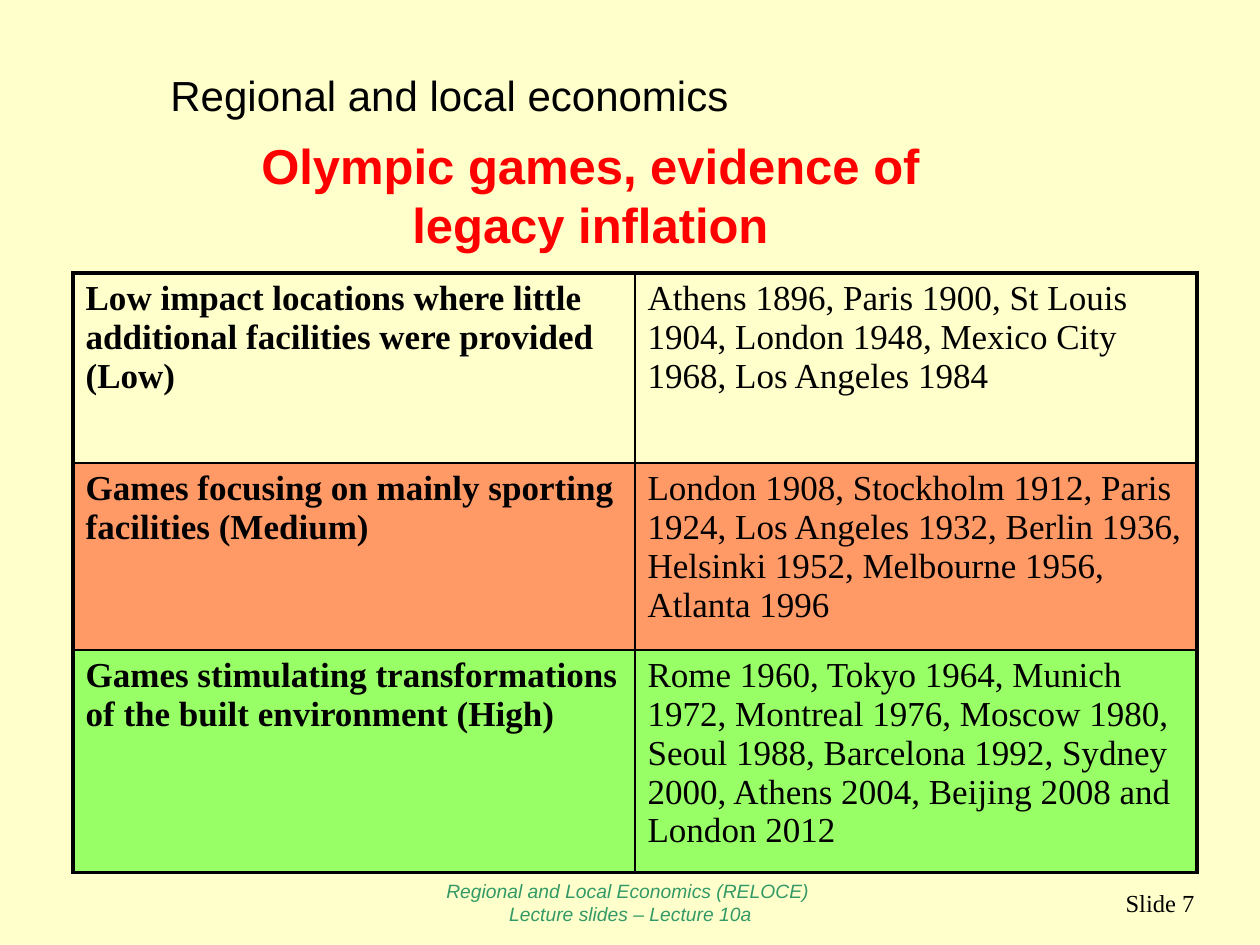
from dataclasses import dataclass

from lxml.etree import SubElement
from pptx import Presentation
from pptx.dml.color import RGBColor
from pptx.enum.text import MSO_ANCHOR as Anchor, MSO_AUTO_SIZE as AutoSize, PP_ALIGN as Align
from pptx.oxml.ns import qn
from pptx.util import Emu, Pt

PX = 914400 // 126
COLORS = {
    "background": "FFFFCC",
    "text": "000000",
    "title": "FF0000",
    "footer": "339966",
    "medium": "FF9966",
    "high": "99FF66",
}


@dataclass
class Style:
    size: int
    font: str = "Arial"
    color: str = "text"
    bold: bool = False
    italic: bool = False


@dataclass
class Label:
    box: tuple[int, int, int, int]
    lines: list[str]
    style: Style
    align: Align = Align.LEFT
    anchor: Anchor = Anchor.TOP
    wrap: bool = False
    grow: bool = False


@dataclass
class Impact:
    description: str
    games: str
    height: int
    fill: str | None = None


LABELS = [
    Label((158, 63, 611, 64), ["Regional and local economics"], Style(24), grow=True),
    Label((945, 871, 262, 63), ["Slide 7"], Style(14, "Times New Roman"),
          Align.RIGHT, Anchor.MIDDLE),
    Label((186, 129, 809, 131), ["Olympic games, evidence of legacy inflation"],
          Style(28, color="title", bold=True), Align.CENTER, wrap=True, grow=True),
    Label((431, 871, 399, 63),
          ["Regional and Local Economics (RELOCE) ", "Lecture slides – Lecture 10a"],
          Style(11, color="footer", italic=True), Align.CENTER, Anchor.MIDDLE),
]

IMPACTS = [
    Impact("Low impact locations where little additional facilities were provided (Low)",
           "Athens 1896, Paris 1900, St Louis 1904, London 1948, Mexico City 1968, "
           "Los Angeles 1984", 190),
    Impact("Games focusing on mainly sporting facilities (Medium)",
           "London 1908, Stockholm 1912, Paris 1924, Los Angeles 1932, Berlin 1936, "
           "Helsinki 1952, Melbourne 1956, Atlanta 1996", 187, "medium"),
    Impact("Games stimulating transformations of the built environment (High)",
           "Rome 1960, Tokyo 1964, Munich 1972, Montreal 1976, Moscow 1980, Seoul 1988, "
           "Barcelona 1992, Sydney 2000, Athens 2004, Beijing 2008 and London 2012",
           222, "high"),
]
TABLE_LEFT, TABLE_TOP, COLUMN_WIDTH = 73, 273, 562
OUTER_LINE, INNER_LINE = 2.25, 1


def px(value: int) -> Emu:
    return Emu(value * PX)


def rgb(name: str) -> RGBColor:
    return RGBColor.from_string(COLORS[name])


def add_run(paragraph, text: str, style: Style) -> None:
    run = paragraph.add_run()
    run.text = text
    font = run.font
    font.name, font.size = style.font, Pt(style.size)
    font.bold, font.italic = style.bold, style.italic
    font.color.rgb = rgb(style.color)


def add_label(slide, label: Label) -> None:
    shape = slide.shapes.add_textbox(*map(px, label.box))
    frame = shape.text_frame
    frame.word_wrap = label.wrap
    frame.auto_size = AutoSize.SHAPE_TO_FIT_TEXT if label.grow else AutoSize.NONE
    frame.vertical_anchor = label.anchor
    for index, line in enumerate(label.lines):
        paragraph = frame.add_paragraph() if index else frame.paragraphs[0]
        paragraph.alignment = label.align
        add_run(paragraph, line, label.style)


def set_borders(cell, widths: dict[str, float]) -> None:
    properties = cell._tc.get_or_add_tcPr()
    for side, width in widths.items():
        line = SubElement(properties, qn(f"a:ln{side}"), w=str(Pt(width)))
        solid = SubElement(line, qn("a:solidFill"))
        SubElement(solid, qn("a:srgbClr"), val=COLORS["text"])


def add_impact_table(slide, impacts: list[Impact]) -> None:
    height = sum(impact.height for impact in impacts)
    table = slide.shapes.add_table(
        len(impacts), 2, px(TABLE_LEFT), px(TABLE_TOP), px(2 * COLUMN_WIDTH), px(height)
    ).table
    table.first_row = table.horz_banding = False
    for column in table.columns:
        column.width = px(COLUMN_WIDTH)
    last_row = len(impacts) - 1
    for row, impact in enumerate(impacts):
        table.rows[row].height = px(impact.height)
        for column, text in enumerate((impact.description, impact.games)):
            cell = table.cell(row, column)
            outer_sides = {"L": column == 0, "R": column == 1,
                           "T": row == 0, "B": row == last_row}
            set_borders(cell, {side: OUTER_LINE if outer else INNER_LINE
                               for side, outer in outer_sides.items()})
            if impact.fill:
                cell.fill.solid()
                cell.fill.fore_color.rgb = rgb(impact.fill)
            else:
                cell.fill.background()
            style = Style(20, "Times New Roman", bold=column == 0)
            add_run(cell.text_frame.paragraphs[0], text, style)


def main() -> None:
    presentation = Presentation()
    presentation.slide_width, presentation.slide_height = px(1260), px(945)
    slide = presentation.slides.add_slide(presentation.slide_layouts[6])
    slide.background.fill.solid()
    slide.background.fill.fore_color.rgb = rgb("background")

    # Heading and slide number, then the table, then title and footer
    for label in LABELS[:2]:
        add_label(slide, label)
    add_impact_table(slide, IMPACTS)
    for label in LABELS[2:]:
        add_label(slide, label)

    presentation.save("out.pptx")


if __name__ == "__main__":
    main()
